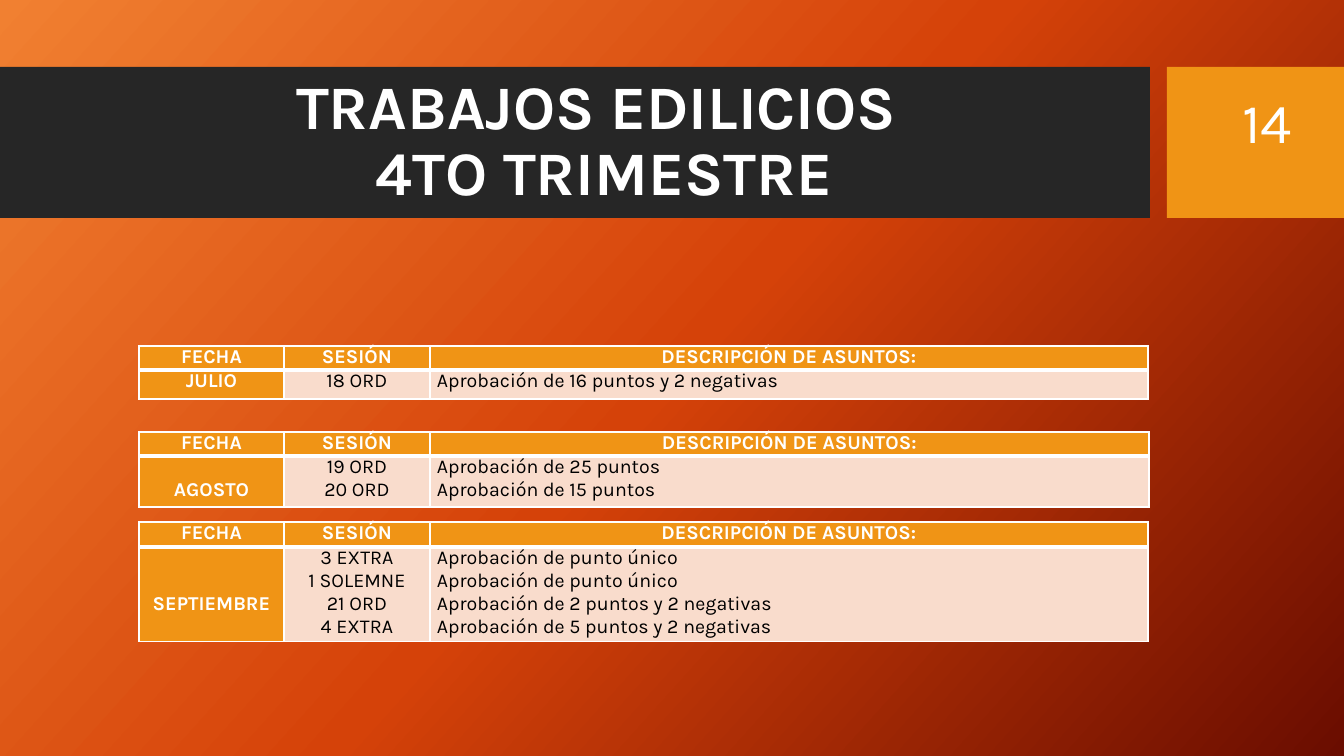
import copy

import pptx
import pptx.dml.color
import pptx.enum.shapes
import pptx.enum.text
import pptx.oxml.ns
import pptx.util
from lxml import etree

RGBColor = pptx.dml.color.RGBColor
Align = pptx.enum.text.PP_ALIGN
Anchor = pptx.enum.text.MSO_ANCHOR
qn = pptx.oxml.ns.qn

WHITE = RGBColor(0xFF, 0xFF, 0xFF)
BLACK = RGBColor(0x00, 0x00, 0x00)
CHARCOAL = RGBColor(0x26, 0x26, 0x26)
AMBER = RGBColor(0xF0, 0x94, 0x15)
PEACH = RGBColor(0xF9, 0xDC, 0xCC)
GRADIENT = (
    (0.0, RGBColor(0xF1, 0x80, 0x31)),
    (0.5, RGBColor(0xD5, 0x42, 0x09)),
    (1.0, RGBColor(0x6A, 0x0D, 0x00)),
)

FONT = "Karla"
EMU_PER_PX = 914400 / 100.8
LINE_HEIGHT = 23
HEADINGS = ("FECHA", "SESIÓN", "DESCRIPCIÓN DE ASUNTOS:")

# top, row heights, description width, month, blank lines above month, sessions
MONTHS = (
    (346, (24, 29), 718, "JULIO", 0, (
        ("18 ORD", "Aprobación de 16 puntos y 2 negativas"),
    )),
    (432, (24, 51), 719, "AGOSTO", 1, (
        ("19 ORD", "Aprobación de 25 puntos"),
        ("20 ORD", "Aprobación de 15 puntos"),
    )),
    (522, (25, 94), 718, "SEPTIEMBRE", 2, (
        ("3 EXTRA", "Aprobación de punto único"),
        ("1 SOLEMNE", "Aprobación de punto único"),
        ("21 ORD", "Aprobación de 2 puntos y 2 negativas"),
        ("4 EXTRA", "Aprobación de 5 puntos y 2 negativas"),
    )),
)


def px(length):
    return pptx.util.Emu(round(length * EMU_PER_PX))


def add_run(paragraph, text, size, color, bold=False):
    run = paragraph.add_run()
    run.text = text
    run.font.name = FONT
    run.font.size = pptx.util.Pt(size)
    run.font.bold = bold
    run.font.color.rgb = color


def paint_background(slide):
    fill = slide.background.fill
    fill.gradient()
    fill.gradient_angle = 360 - 42
    stop_list = slide.element.find(".//" + qn("a:gsLst"))
    stop_list.append(copy.deepcopy(stop_list[-1]))
    for stop, (position, color) in zip(fill.gradient_stops, GRADIENT):
        stop.position = position
        stop.color.rgb = color


def add_band(slide, left, width, color):
    shape = slide.shapes.add_shape(
        pptx.enum.shapes.MSO_SHAPE.RECTANGLE, px(left), px(67), px(width), px(151))
    shape.shadow.inherit = False
    shape.fill.solid()
    shape.fill.fore_color.rgb = color
    shape.line.fill.background()


def place_title(slide, lines):
    title = slide.shapes.title
    title.left, title.top, title.width, title.height = px(75), px(83), px(1059), px(119)
    slide.shapes.element.append(title.element)  # in front of the bands
    frame = title.text_frame
    frame.word_wrap = True
    frame.auto_size = pptx.enum.text.MSO_AUTO_SIZE.NONE
    frame.vertical_anchor = Anchor.MIDDLE
    paragraph = frame.paragraphs[0]
    paragraph.alignment = Align.CENTER
    paragraph.line_spacing = 0.9
    for index, line in enumerate(lines):
        if index:
            paragraph.add_line_break()
        add_run(paragraph, line, 44.1, WHITE, bold=True)


def add_page_number(slide, number):
    box = slide.shapes.add_textbox(px(1227), px(83), px(80), px(78))
    frame = box.text_frame
    frame.word_wrap = False
    paragraph = frame.paragraphs[0]
    paragraph.alignment = Align.CENTER
    add_run(paragraph, number, 40, WHITE)


def set_borders(cell, widths):
    """Draw white cell edges; widths maps L, R, T, B (in that order) to points."""
    properties = cell._tc.get_or_add_tcPr()
    for side, width in widths.items():
        line = etree.SubElement(
            properties, qn("a:ln" + side), w=str(pptx.util.Pt(width)))
        fill = etree.SubElement(line, qn("a:solidFill"))
        etree.SubElement(fill, qn("a:srgbClr"), val=str(WHITE))


def fill_cell(cell, lines, fill, color, borders, alignment=Align.CENTER, top=0):
    set_borders(cell, borders)
    cell.fill.solid()
    cell.fill.fore_color.rgb = fill
    cell.margin_left = cell.margin_right = px(7)
    cell.margin_top = px(top)
    cell.margin_bottom = 0
    frame = cell.text_frame
    for index, line in enumerate(lines):
        paragraph = frame.add_paragraph() if index else frame.paragraphs[0]
        paragraph.alignment = alignment
        add_run(paragraph, line, 14, color, bold=color == WHITE)


def add_month_table(slide, top, heights, description_width, month, blank_lines, sessions):
    widths = (145, 146, description_width)
    table = slide.shapes.add_table(
        2, 3, px(139), px(top), px(sum(widths)), px(sum(heights))).table
    table.horz_banding = False
    for column, width in zip(table.columns, widths):
        column.width = px(width)
    for row, height in zip(table.rows, heights):
        row.height = px(height)

    header_borders = {"L": 1, "R": 1, "T": 1, "B": 3}
    for index, heading in enumerate(HEADINGS):
        fill_cell(table.cell(0, index), [heading], AMBER, WHITE, header_borders)

    body_borders = {"L": 1, "R": 1, "B": 1}
    names, descriptions = zip(*sessions)
    fill_cell(table.cell(1, 0), [month], AMBER, WHITE, body_borders,
              top=blank_lines * LINE_HEIGHT)
    fill_cell(table.cell(1, 1), names, PEACH, BLACK, body_borders)
    fill_cell(table.cell(1, 2), descriptions, PEACH, BLACK, body_borders, Align.JUSTIFY)


def main():
    presentation = pptx.Presentation()
    presentation.slide_width = px(1344)
    presentation.slide_height = px(756)
    slide = presentation.slides.add_slide(presentation.slide_layouts[5])

    paint_background(slide)
    add_band(slide, 0, 1150, CHARCOAL)
    add_band(slide, 1167, 177, AMBER)
    place_title(slide, ("TRABAJOS EDILICIOS ", "4TO TRIMESTRE"))
    add_page_number(slide, "14")
    for month in MONTHS:
        add_month_table(slide, *month)

    presentation.save("out.pptx")


if __name__ == "__main__":
    main()
